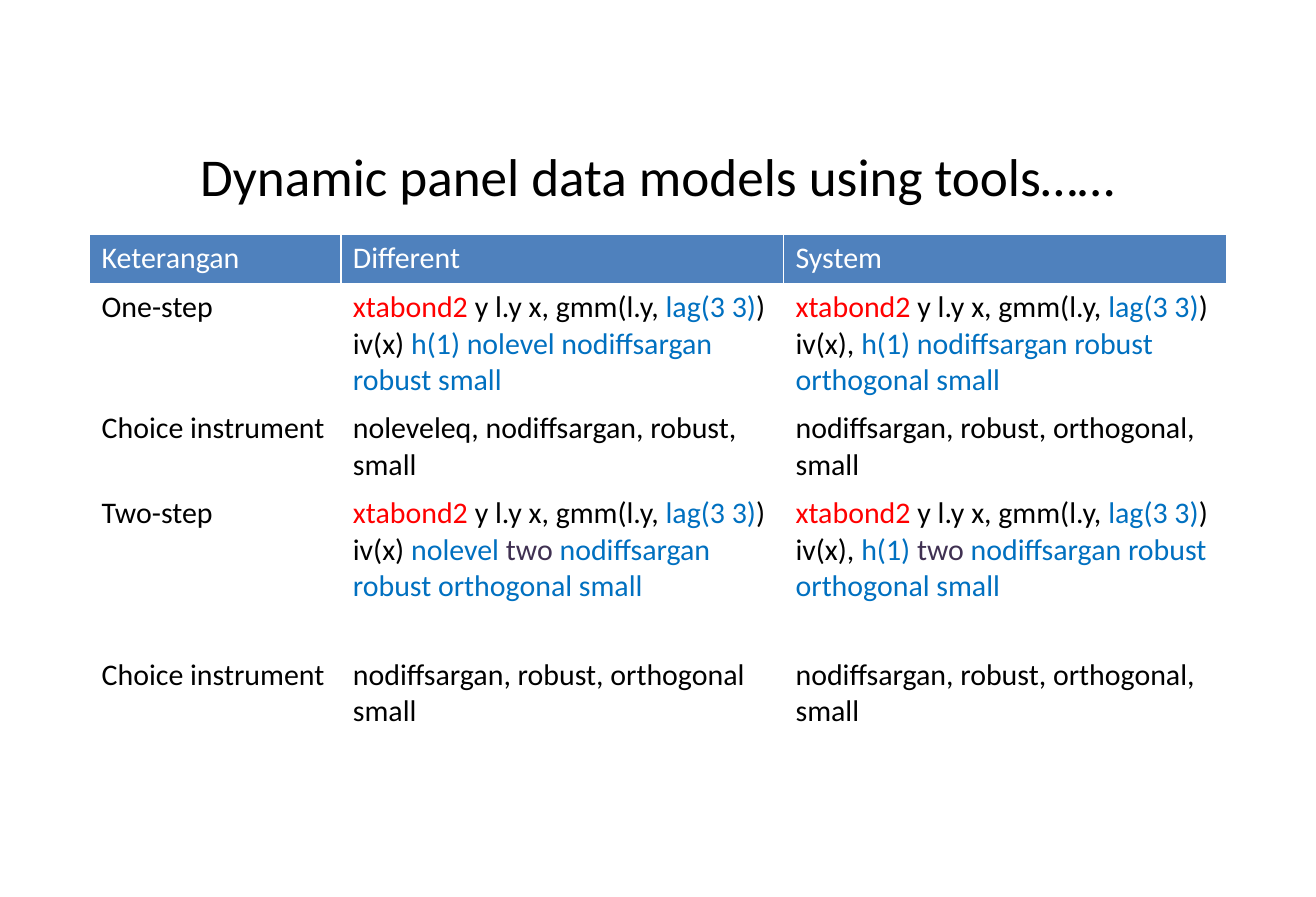
"""Build a slide with a table of xtabond2 commands for dynamic panel models."""
from dataclasses import dataclass
from typing import NamedTuple

from pptx import Presentation
from pptx import util as u
from pptx.dml import color
from pptx.enum import text


@dataclass(frozen=True)
class Theme:
    font: str = "Calibri"
    title_size: int = 32
    cell_size: int = 18
    ink: str = "000000"
    paper: str = "FFFFFF"
    header: str = "4F81BD"
    command: str = "FF0000"
    option: str = "0070C0"
    step: str = "403152"


class Span(NamedTuple):
    text: str
    colour: str


class Box(NamedTuple):
    column: float
    row: float
    columns: float
    rows: float


T = Theme()
UNIT = u.Inches(0.25)
SLIDE_W, SLIDE_H = 44 * UNIT, 30 * UNIT
TITLE = Box(2.2, 3.36, 39.6, 5)
TABLE = Box(3, 7.84, 38, 16.76)
COLUMNS = (8.4, 14.8, 14.8)
ROWS = (1.64, 4.04, 2.84, 5.4, 2.84)


def plain(words: str, colour: str = T.ink) -> list[Span]:
    return [Span(words, colour)]


def command(instruments: str, *options: Span) -> list[Span]:
    return [
        Span("xtabond2 ", T.command),
        Span("y l.y x, gmm(l.y, ", T.ink),
        Span("lag(3 3)", T.option),
        Span(f") {instruments} ", T.ink),
        *options,
    ]


TWO_STEP = (Span("two ", T.step), Span("nodiffsargan robust orthogonal small", T.option))
CELLS = [
    [plain(name, T.paper) for name in ("Keterangan", "Different", "System")],
    [
        plain("One-step"),
        command("iv(x)", Span("h(1) nolevel nodiffsargan robust small", T.option)),
        command("iv(x),", Span("h(1) nodiffsargan robust orthogonal small", T.option)),
    ],
    [
        plain("Choice instrument"),
        plain("noleveleq, nodiffsargan, robust, small"),
        plain("nodiffsargan, robust, orthogonal, small"),
    ],
    [
        plain("Two-step"),
        command("iv(x)", Span("nolevel ", T.option), *TWO_STEP),
        command("iv(x),", Span("h(1) ", T.option), *TWO_STEP),
    ],
    [
        plain("Choice instrument"),
        plain("nodiffsargan, robust, orthogonal small"),
        plain("nodiffsargan, robust, orthogonal, small"),
    ],
]


def length(units: float) -> int:
    return round(units * UNIT)


def write(p, spans: list[Span], size: int) -> None:
    for span in spans:
        r = p.add_run()
        r.text = span.text
        r.font.name = T.font
        r.font.size = u.Pt(size)
        r.font.bold = False
        r.font.color.rgb = color.RGBColor.from_string(span.colour)


def draw_title(s, words: str) -> None:
    tf = s.shapes.add_textbox(*map(length, TITLE)).text_frame
    tf.word_wrap = True
    tf.vertical_anchor = text.MSO_ANCHOR.MIDDLE
    p = tf.paragraphs[0]
    p.alignment = text.PP_ALIGN.CENTER
    write(p, plain(words), T.title_size)


def draw_table(s) -> None:
    table = s.shapes.add_table(len(ROWS), len(COLUMNS), *map(length, TABLE)).table
    table.horz_banding = False
    for column, width in zip(table.columns, COLUMNS):
        column.width = length(width)
    for i, (row, height) in enumerate(zip(table.rows, ROWS)):
        row.height = length(height)
        for cell, spans in zip(row.cells, CELLS[i]):
            cell.fill.solid()
            fill = T.paper if i else T.header
            cell.fill.fore_color.rgb = color.RGBColor.from_string(fill)
            write(cell.text_frame.paragraphs[0], spans, T.cell_size)


def main() -> None:
    prs = Presentation()
    prs.slide_width, prs.slide_height = SLIDE_W, SLIDE_H
    s = prs.slides.add_slide(prs.slide_layouts[6])
    draw_title(s, "Dynamic panel data models using tools……")
    draw_table(s)
    prs.save("out.pptx")


if __name__ == "__main__":
    main()
